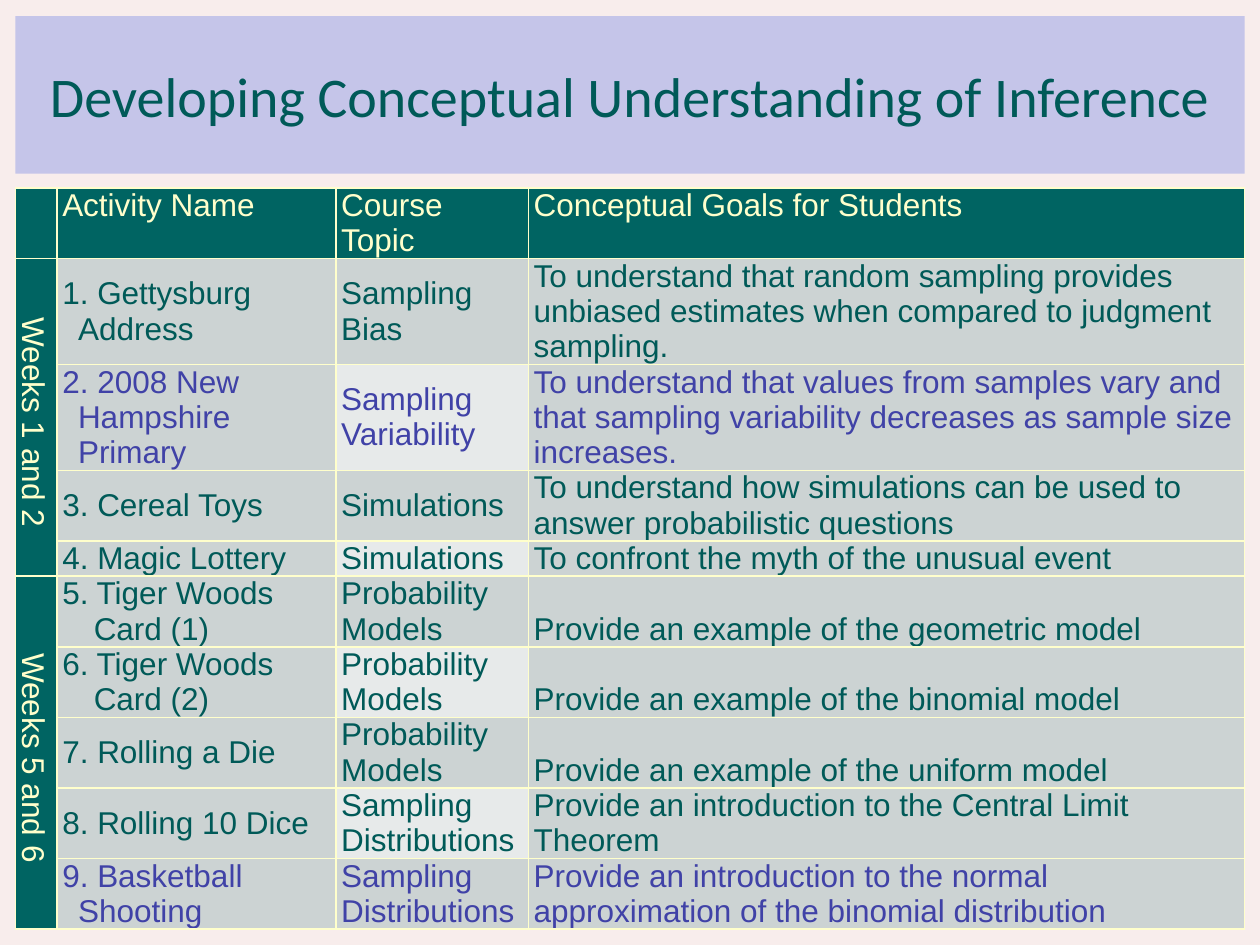
from dataclasses import dataclass
from itertools import product

from lxml import etree
from pptx import Presentation
from pptx.dml.color import RGBColor
from pptx.enum.shapes import MSO_SHAPE
from pptx.enum.text import MSO_ANCHOR, PP_ALIGN
from pptx.oxml.ns import qn
from pptx.util import Pt

RECT = MSO_SHAPE.RECTANGLE
TOP, MID, LOW = MSO_ANCHOR.TOP, MSO_ANCHOR.MIDDLE, MSO_ANCHOR.BOTTOM
LEFT, MIDST = PP_ALIGN.LEFT, PP_ALIGN.CENTER

TEAL, DARK, BLUE, CREAM = "006462", "005A58", "4042A7", "FFFFCC"
GREY, PALE, PINK, LILAC = "CCD3D3", "E7EAEA", "F8EDEC", "C5C5E9"

EDGE, WIDE = 8.8, 702.5
COLS = (23.7, 159.4, 110, 409.4)
LINE = 20.15
HEADS = ("Activity Name", "Course Topic", "Conceptual Goals for Students")
INSETS = dict(margin_left=Pt(3.1), margin_right=Pt(3.1),
              margin_top=0, margin_bottom=0)


@dataclass
class Task:
    name: str
    topic: str
    goal: str
    lines: int = 2
    tint: str = DARK
    hang: float = 9


@dataclass
class Span:
    label: str
    first: int
    last: int
    left: float
    shift: float


TASKS = (
    Task("1. Gettysburg Address", "Sampling Bias",
         "To understand that random sampling provides unbiased estimates "
         "when compared to judgment sampling.", 3),
    Task("2. 2008 New Hampshire Primary", "Sampling Variability",
         "To understand that values from samples vary and that sampling "
         "variability decreases as sample size increases.", 3, BLUE),
    Task("3. Cereal Toys", "Simulations",
         "To understand how simulations can be used to answer "
         "probabilistic questions"),
    Task("4. Magic Lottery", "Simulations",
         "To confront the myth of the unusual event", 1),
    Task("5. Tiger Woods Card (1)", "Probability Models",
         "Provide an example of the geometric model", hang=18),
    Task("6. Tiger Woods Card (2)", "Probability Models",
         "Provide an example of the binomial model", hang=18),
    Task("7. Rolling a Die", "Probability Models",
         "Provide an example of the uniform model"),
    Task("8. Rolling 10 Dice", "Sampling Distributions",
         "Provide an introduction to the Central Limit Theorem"),
    Task("9. Basketball Shooting", "Sampling Distributions",
         "Provide an introduction to the normal approximation of the "
         "binomial distribution", tint=BLUE),
)
SPANS = (Span("Weeks 1 and 2", 1, 4, 14.4, -9),
         Span("Weeks 5 and 6", 5, 9, 24, -18))


def paint(fill, tint: str) -> None:
    fill.solid()
    fill.fore_color.rgb = RGBColor.from_string(tint)


def apply(item, form: dict) -> None:
    for key, value in form.items():
        setattr(item, key, value)


def write(frame, text: str, tint: str, size: float = 18,
          face: str = "Arial", align=LEFT) -> None:
    para = frame.paragraphs[0]
    para.alignment = align
    run = para.add_run()
    run.text = text
    apply(run.font, dict(size=Pt(size), name=face, bold=False))
    run.font.color.rgb = RGBColor.from_string(tint)


def indent(cell, left: float, shift: float) -> None:
    props = cell.text_frame.paragraphs[0]._p.get_or_add_pPr()
    props.set("marL", str(Pt(left)))
    props.set("indent", str(Pt(shift)))


def border(cell) -> None:
    props = cell._tc.get_or_add_tcPr()
    for spot, side in enumerate("LRTB"):
        line = etree.Element(qn(f"a:ln{side}"), w=str(Pt(1)))
        fill = etree.SubElement(line, qn("a:solidFill"))
        etree.SubElement(fill, qn("a:srgbClr"), val=CREAM)
        props.insert(spot, line)


def banner(slide) -> None:
    box = slide.shapes.add_shape(RECT, Pt(EDGE), Pt(9.2), Pt(WIDE), Pt(90))
    box.shadow.inherit = False
    paint(box.fill, LILAC)
    box.line.fill.background()
    apply(box.text_frame, dict(word_wrap=True, vertical_anchor=MID))
    write(box.text_frame, "Developing Conceptual Understanding of Inference",
          DARK, 32, "Calibri", MIDST)


def style(grid) -> None:
    for row, col in product(range(len(grid.rows)), range(len(COLS))):
        cell = grid.cell(row, col)
        head = row == 0 or col == 0
        pale = col == 2 and row % 2 == 0
        paint(cell.fill, TEAL if head else PALE if pale else GREY)
        border(cell)
        apply(cell, INSETS)
        cell.vertical_anchor = TOP if row == 0 else LOW if col == 3 else MID


def plan(slide) -> None:
    sizes = [2] + [task.lines for task in TASKS]
    grid = slide.shapes.add_table(
        len(sizes), len(COLS), Pt(EDGE), Pt(107.4),
        Pt(WIDE), Pt(LINE * sum(sizes))).table
    apply(grid, dict(first_row=False, horz_banding=False))
    for col, width in zip(grid.columns, COLS):
        col.width = Pt(width)
    for row, lines in zip(grid.rows, sizes):
        row.height = Pt(LINE * lines)
    style(grid)
    for col, text in enumerate(HEADS, 1):
        write(grid.cell(0, col).text_frame, text, CREAM)
    for row, task in enumerate(TASKS, 1):
        for col, text in enumerate((task.name, task.topic, task.goal), 1):
            write(grid.cell(row, col).text_frame, text, task.tint)
        indent(grid.cell(row, 1), task.hang, -task.hang)
    for span in SPANS:
        cell = grid.cell(span.first, 0)
        cell.merge(grid.cell(span.last, 0))
        write(cell.text_frame, span.label, CREAM, align=MIDST)
        indent(cell, span.left, span.shift)
        cell._tc.get_or_add_tcPr().set("vert", "vert")


def main() -> None:
    deck = Presentation()
    apply(deck, dict(slide_width=Pt(720), slide_height=Pt(540)))
    slide = deck.slides.add_slide(deck.slide_layouts[6])
    paint(slide.background.fill, PINK)
    banner(slide)
    plan(slide)
    deck.save("out.pptx")


if __name__ == "__main__":
    main()
